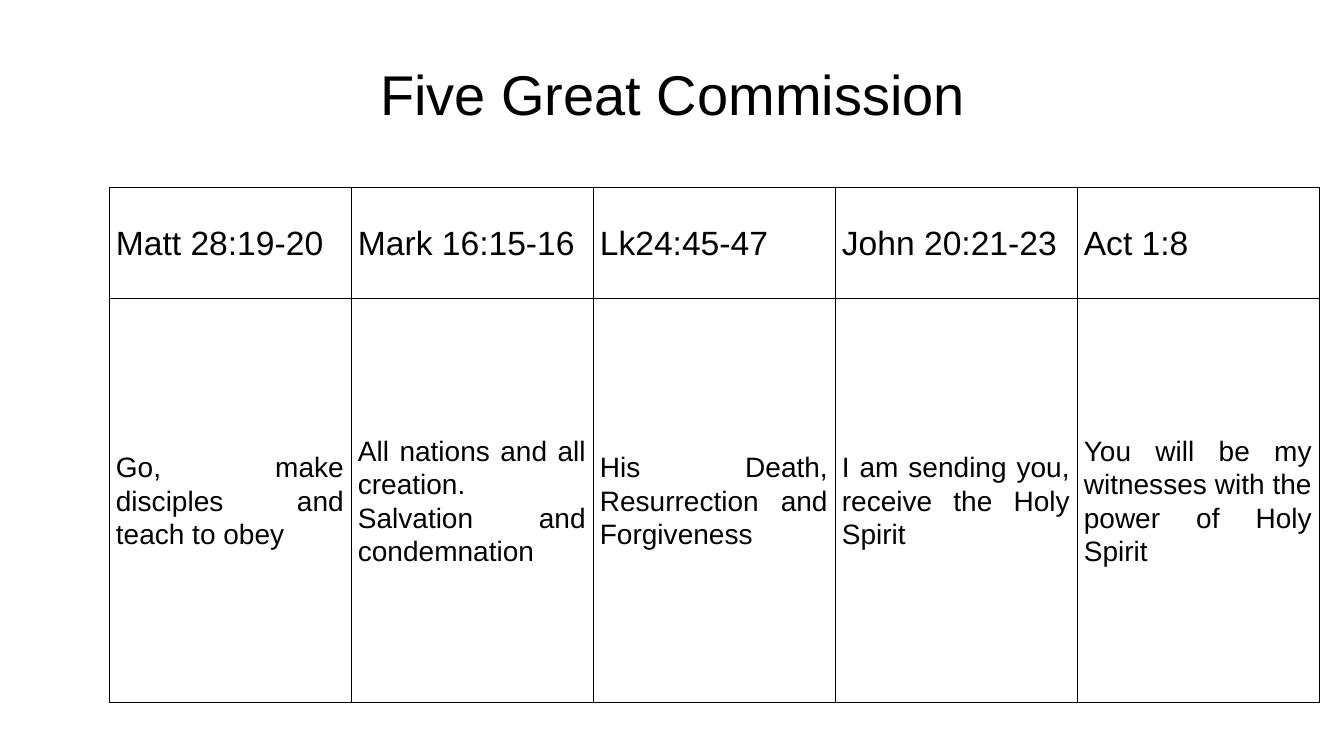
from dataclasses import dataclass

from lxml import etree
from pptx import Presentation
from pptx.dml.color import RGBColor
from pptx.enum.text import MSO_ANCHOR, PP_ALIGN
from pptx.oxml.ns import qn
from pptx.util import Inches, Pt

MIDDLE = MSO_ANCHOR.MIDDLE
CENTER = PP_ALIGN.CENTER
JUSTIFY = PP_ALIGN.JUSTIFY
TITLE_ONLY = 5
FONT = "Arial"
BLACK = "000000"
WHITE = "FFFFFF"
BORDER_POINTS = 0.28
COLUMN_WIDTH = 2.4
ROW_HEIGHTS = (1.1, 4.01)
ROW_SIZES = (24, 20)


@dataclass(frozen=True)
class Commission:
    reference: str
    message: str


COMMISSIONS = (
    Commission("Matt 28:19-20", "Go, make disciples and teach to obey"),
    Commission("Mark 16:15-16", "All nations and all creation. Salvation and condemnation"),
    Commission("Lk24:45-47", "His Death, Resurrection and Forgiveness"),
    Commission("John 20:21-23", "I am sending you, receive the Holy Spirit"),
    Commission("Act 1:8", "You will be my witnesses with the power of Holy Spirit"),
)


def colour(value: str) -> RGBColor:
    return RGBColor.from_string(value)


def write(frame, text: str, *, size: float, align, line_spacing=1.0, space_after=0) -> None:
    frame.word_wrap = True
    para = frame.paragraphs[0]
    para.alignment = align
    para.line_spacing = line_spacing
    para.space_before = Pt(0)
    para.space_after = Pt(space_after)
    span = para.add_run()
    span.text = text
    span.font.name = FONT
    span.font.size = Pt(size)
    span.font.bold = False
    span.font.color.rgb = colour(BLACK)


def add_borders(cell) -> None:
    properties = cell._tc.get_or_add_tcPr()
    for index, side in enumerate(("a:lnL", "a:lnR", "a:lnT", "a:lnB")):
        line = etree.Element(qn(side), w=str(Pt(BORDER_POINTS)))
        fill = etree.SubElement(line, qn("a:solidFill"))
        etree.SubElement(fill, qn("a:srgbClr"), val=BLACK)
        properties.insert(index, line)


def format_cell(cell, text: str, size: float) -> None:
    cell.fill.solid()
    cell.fill.fore_color.rgb = colour(WHITE)
    cell.vertical_anchor = MIDDLE
    cell.margin_left = cell.margin_right = Inches(0.07)
    cell.margin_top = cell.margin_bottom = Inches(0.02)
    write(cell.text_frame, text, size=size, align=JUSTIFY, line_spacing=1.07, space_after=8)
    add_borders(cell)


def add_title(page, text: str) -> None:
    title = page.shapes.title
    title.left, title.top = Inches(0.67), Inches(0.3)
    title.width, title.height = Inches(12), Inches(1.25)
    title.text_frame.vertical_anchor = MIDDLE
    write(title.text_frame, text, size=40, align=CENTER)


def add_commission_table(page) -> None:
    table = page.shapes.add_table(
        len(ROW_HEIGHTS), len(COMMISSIONS), Inches(1.08), Inches(1.86),
        Inches(COLUMN_WIDTH * len(COMMISSIONS)), Inches(sum(ROW_HEIGHTS)),
    ).table
    table.first_row = False
    table.horz_banding = False
    for row, height in zip(table.rows, ROW_HEIGHTS):
        row.height = Inches(height)
    for column, commission in enumerate(COMMISSIONS):
        table.columns[column].width = Inches(COLUMN_WIDTH)
        texts = (commission.reference, commission.message)
        for row, (text, size) in enumerate(zip(texts, ROW_SIZES)):
            format_cell(table.cell(row, column), text, size)


def main() -> None:
    deck = Presentation()
    deck.slide_width, deck.slide_height = Inches(13.33), Inches(7.5)
    page = deck.slides.add_slide(deck.slide_layouts[TITLE_ONLY])
    add_title(page, "Five Great Commission")
    add_commission_table(page)
    deck.save("out.pptx")


if __name__ == "__main__":
    main()
